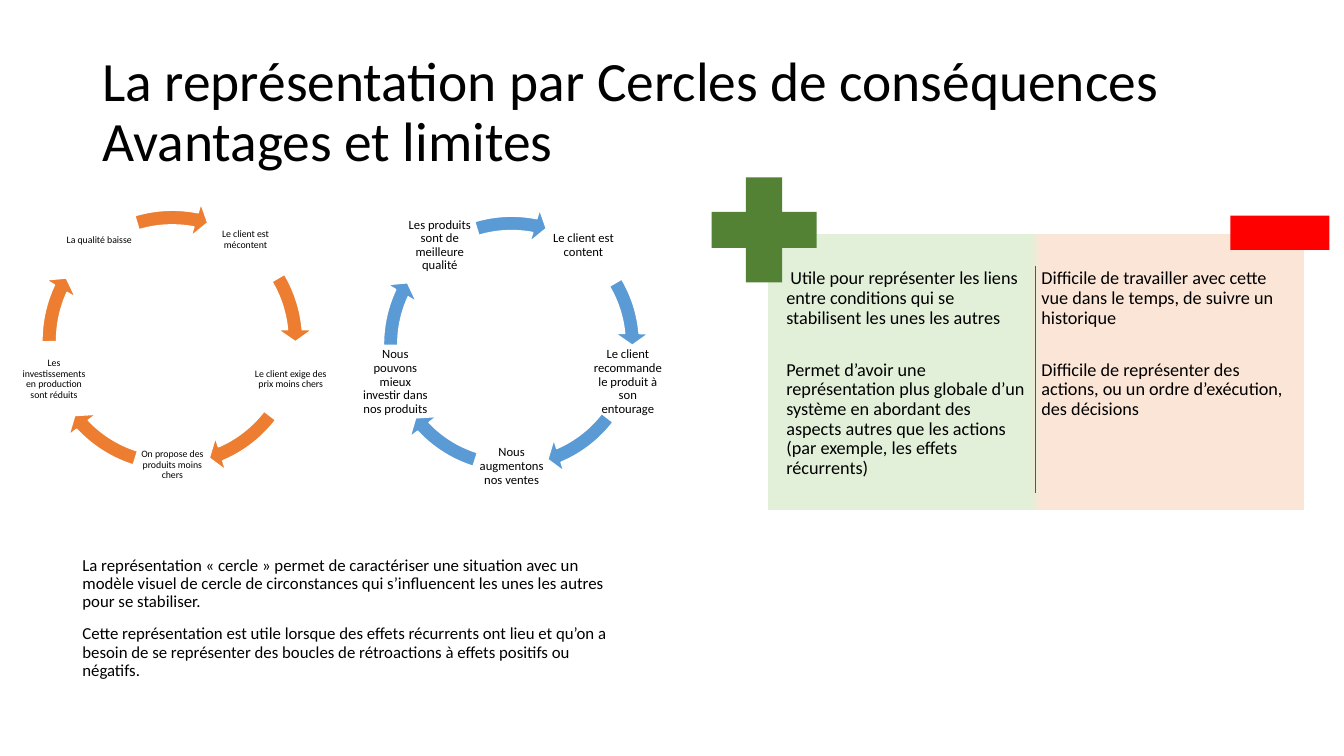
import copy
import math
from dataclasses import dataclass

import pptx
import pptx.dml.color
import pptx.enum.shapes
import pptx.enum.text
import pptx.oxml.ns
import pptx.util

SHAPE = pptx.enum.shapes.MSO_SHAPE
ALIGN = pptx.enum.text.PP_ALIGN
ANCHOR = pptx.enum.text.MSO_ANCHOR


@dataclass(frozen=True)
class Theme:
    """Hold the colours and type sizes of the slide."""
    font: str = "Calibri"
    ink: str = "000000"
    paper: str = "FFFFFF"
    vicious: str = "ED7D31"
    virtuous: str = "5B9BD5"
    pros: str = "E2F0D9"
    cons: str = "FBE5D6"
    plus: str = "548235"
    minus: str = "FF0000"
    divider: str = "365B9D"
    title_size: float = 39.6
    body_size: float = 12
    panel_size: float = 13
    vicious_size: float = 7
    virtuous_size: float = 9


THEME = Theme()
TITLE = ["La représentation par Cercles de conséquences\vAvantages et limites"]
BODY = [
    "La représentation « cercle » permet de caractériser une situation avec un modèle visuel "
    "de cercle de circonstances qui s’influencent les unes les autres pour se stabiliser.",
    "Cette représentation est utile lorsque des effets récurrents ont lieu et qu’on a besoin de "
    "se représenter des boucles de rétroactions à effets positifs ou négatifs.",
]
VICIOUS = [
    "Le client est mécontent",
    "Le client exige des prix moins chers",
    "On propose des produits moins chers",
    "Les investissements en production sont réduits",
    "La qualité baisse",
]
VIRTUOUS = [
    "Le client est content",
    "Le client recommande le produit à son entourage",
    "Nous augmentons nos ventes",
    "Nous pouvons mieux investir dans nos produits",
    "Les produits sont de meilleure qualité",
]
PROS = [
    " Utile pour représenter les liens entre conditions qui se stabilisent les unes les autres",
    "Permet d’avoir une représentation plus globale d’un système en abordant des aspects autres "
    "que les actions (par exemple, les effets récurrents)",
]
CONS = [
    "Difficile de travailler avec cette vue dans le temps, de suivre un historique",
    "Difficile de représenter des actions, ou un ordre d’exécution, des décisions",
]
ARROW_ANGLES = [(354.9, 329.4), (66.93, 37.54), (136.87, 107.47), (204.98, 179.5), (281.11, 253.29)]


def points(*lengths):
    """Convert numbers to lengths in points."""
    return [pptx.util.Pt(length) for length in lengths]


def colour(code):
    """Return the colour for a hexadecimal code."""
    return pptx.dml.color.RGBColor.from_string(code)


def apply(target, values):
    """Set every attribute of target named in values."""
    for name, value in values.items():
        setattr(target, name, value)


def add_text(shapes, box, texts, size, inset=None, anchor=ANCHOR.MIDDLE, **para_format):
    """Add a wrapped text box with one paragraph per text."""
    frame = shapes.add_textbox(*points(*box)).text_frame
    apply(frame, {"word_wrap": True, "vertical_anchor": anchor})
    if inset is not None:
        sides = ("margin_left", "margin_top", "margin_right", "margin_bottom")
        apply(frame, dict.fromkeys(sides, pptx.util.Pt(inset)))
    for index, text in enumerate(texts):
        para = frame.add_paragraph() if index else frame.paragraphs[0]
        para.text = text
        apply(para, {"line_spacing": 0.9, **para_format})
        for span in para.runs:
            apply(span.font, {"name": THEME.font, "size": pptx.util.Pt(size)})
            span.font.color.rgb = colour(THEME.ink)


def add_block(shapes, kind, box, fill=None, line=None):
    """Add a preset shape with a plain fill and an optional outline."""
    block = shapes.add_shape(kind, *points(*box))
    block.shadow.inherit = False
    if fill:
        block.fill.solid()
        block.fill.fore_color.rgb = colour(fill)
    if line:
        block.line.color.rgb = colour(line)
        block.line.width = pptx.util.Pt(1)
    else:
        block.line.fill.background()
    return block


def add_cycle(page, box, steps, fill, size):
    """Draw a ring of arrows with step labels spaced evenly around it."""
    left, top, side = box
    shapes = page.shapes.add_group_shape().shapes
    label, radius = side * 0.266, side * 0.444
    for index, (step, (head, tail)) in enumerate(zip(steps, ARROW_ANGLES)):
        turn = math.radians(-54 + index * 360 / len(steps))
        label_left = left + side / 2 + radius * math.cos(turn) - label / 2
        label_top = top + side / 2 + radius * math.sin(turn) - label / 2
        add_text(shapes, (label_left, label_top, label, label), [step], size,
                 inset=0.7, alignment=ALIGN.CENTER)
        arrow = add_block(shapes, SHAPE.CIRCULAR_ARROW, (left, top, side, side), fill, THEME.paper)
        settings = (0.052, 3.356, head * 0.6, tail * 0.6, 0.061)
        for position, setting in enumerate(settings):
            arrow.adjustments[position] = setting


def split_fill(panel, first, second):
    """Fill a panel with two colours that meet in its middle."""
    panel.fill.gradient()
    panel.fill.gradient_angle = 0
    stops = panel.fill.gradient_stops
    stop_list = panel._element.spPr.find(".//" + pptx.oxml.ns.qn("a:gsLst"))
    for stop, code, position in zip(stops, (first, second), (0, 1)):
        stop.color.rgb = colour(code)
        stop.position = position
    start, end = list(stop_list)
    for edge, position in ((start, "49000"), (end, "51000")):
        inner = copy.deepcopy(edge)
        inner.set("pos", position)
        end.addprevious(inner)


def add_balance(page, box):
    """Draw the panel of advantages and limits with its signs."""
    left, top, width, height = box
    shapes = page.shapes.add_group_shape().shapes
    panel = add_block(shapes, SHAPE.RECTANGLE, box, line=THEME.paper)
    split_fill(panel, THEME.pros, THEME.cons)
    for offset, texts in ((11.5, PROS), (193.7, CONS)):
        add_text(shapes, (left + offset, top + 23, 178, 170), texts, THEME.panel_size,
                 inset=2.3, anchor=ANCHOR.TOP, space_after=pptx.util.Pt(23))
    plus = add_block(shapes, SHAPE.CROSS, (left - 39.6, top - 40.3, 75, 75), THEME.plus)
    plus.adjustments[0] = 0.328
    add_block(shapes, SHAPE.RECTANGLE, (left + 331, top - 13, 70.6, 24.5), THEME.minus)
    middle = left + width / 2
    divider = shapes.add_connector(pptx.enum.shapes.MSO_CONNECTOR.STRAIGHT,
                                   *points(middle, top + 23, middle, top + 185))
    divider.line.color.rgb = colour(THEME.divider)
    divider.line.width = pptx.util.Pt(1)
    divider._element.spPr.append(pptx.oxml.parse_xml(
        f"<a:effectLst {pptx.oxml.ns.nsdecls('a')}/>"))


def main():
    """Build the slide and save the deck."""
    deck = pptx.Presentation()
    apply(deck, {"slide_width": pptx.util.Pt(960), "slide_height": pptx.util.Pt(540)})
    page = deck.slides.add_slide(deck.slide_layouts[6])
    add_text(page.shapes, (66, 28.75, 828, 104.4), TITLE, THEME.title_size)
    add_cycle(page, (23, 143.2, 200.2), VICIOUS, THEME.vicious, THEME.vicious_size)
    add_text(page.shapes, (51.8, 371.5, 390, 140.4), BODY, THEME.body_size,
             space_before=pptx.util.Pt(10))
    add_cycle(page, (267.1, 147.6, 196.6), VIRTUOUS, THEME.virtuous, THEME.virtuous_size)
    add_balance(page, (547.9, 167, 383.8, 198))
    deck.save("out.pptx")


if __name__ == "__main__":
    main()
